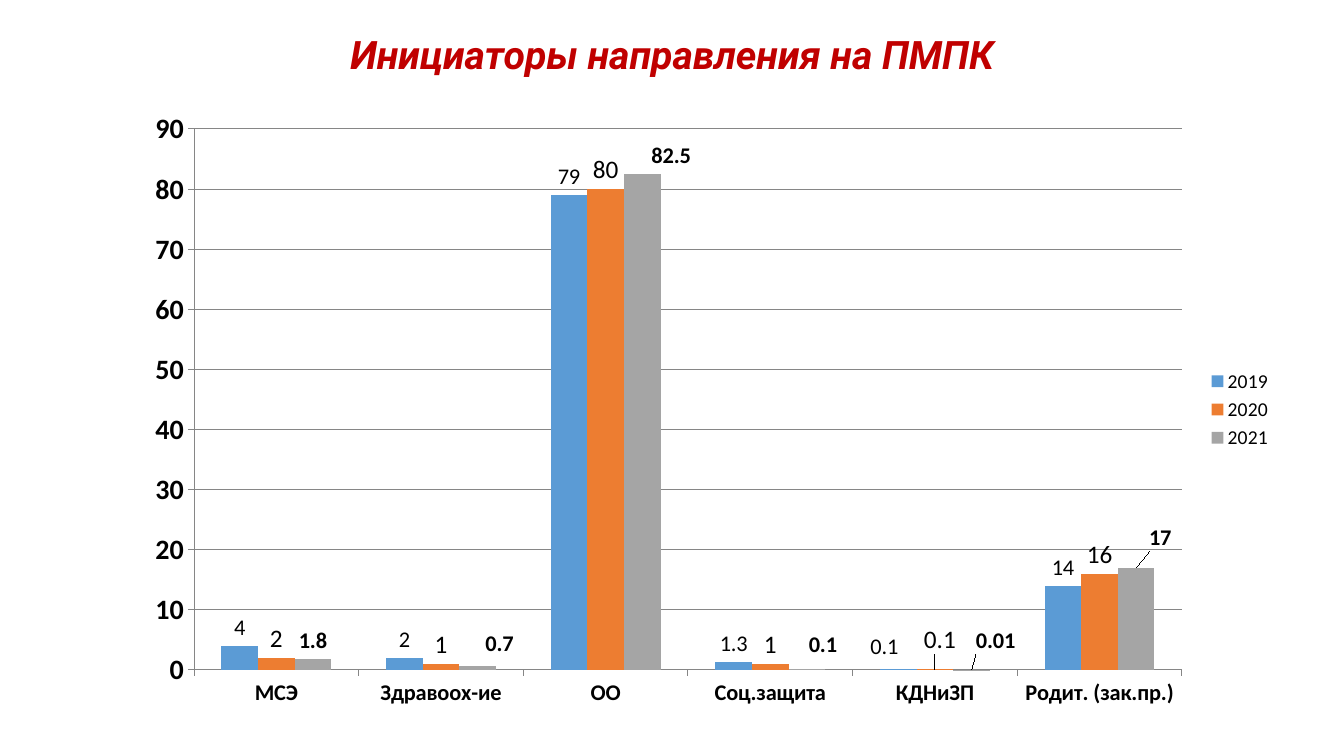
from dataclasses import dataclass, field

from lxml.etree import SubElement
from pptx import Presentation
from pptx.chart.data import CategoryChartData
from pptx.dml.color import RGBColor
from pptx.enum.chart import (XL_CHART_TYPE, XL_LABEL_POSITION, XL_LEGEND_POSITION,
                             XL_TICK_MARK)
from pptx.enum.text import MSO_ANCHOR, PP_ALIGN
from pptx.oxml.ns import qn
from pptx.util import Emu, Pt

SLIDE_WIDTH, SLIDE_HEIGHT = 1344, 756
EMU_PER_PX = 12192000 / SLIDE_WIDTH

RED = RGBColor(0xC0, 0x00, 0x00)
BLACK = RGBColor(0x00, 0x00, 0x00)
BLUE = RGBColor(0x5B, 0x9B, 0xD5)
ORANGE = RGBColor(0xED, 0x7D, 0x31)
GRAY = RGBColor(0xA5, 0xA5, 0xA5)
LINE_GRAY = RGBColor(0x86, 0x86, 0x86)


@dataclass(frozen=True)
class Box:
    left: int
    top: int
    width: int
    height: int

    def emu(self) -> tuple[Emu, ...]:
        return tuple(px(n) for n in (self.left, self.top, self.width, self.height))


@dataclass(frozen=True)
class YearSeries:
    """One year's columns; label_shifts maps a category index to px moved (x, y)."""
    year: str
    values: tuple[float, ...]
    color: RGBColor
    label_size: int
    label_bold: bool = False
    label_shifts: dict[int, tuple[int, int]] = field(default_factory=dict)


TITLE = Box(67, 30, 1210, 54)
CHART = Box(132, 100, 1151, 619)
PLOT = Box(62, 29, 988, 541)  # inside the chart

CATEGORIES = ("МСЭ", "Здравоох-ие", "ОО", "Соц.защита", "КДНиЗП", "Родит. (зак.пр.)")
YEARS = (
    YearSeries("2019", (4, 2, 79, 1.3, 0.1, 14), BLUE, 16, label_shifts={4: (-14, -5)}),
    YearSeries("2020", (2, 1, 80, 1, 0.1, 16), ORANGE, 18, label_shifts={4: (5, -11)}),
    YearSeries("2021", (1.8, 0.7, 82.5, 0.1, 0.01, 17), GRAY, 16, True,
               {1: (22, -4), 2: (29, 0), 3: (16, -7), 4: (24, -11), 5: (24, -12)}),
)


def px(length: int) -> Emu:
    return Emu(round(length * EMU_PER_PX))


def add_layout(parent, index: int, settings: dict[str, object]) -> None:
    """Give a chart element a manual layout as its child at index."""
    for old in parent.findall(qn("c:layout")):
        parent.remove(old)
    layout = SubElement(parent, qn("c:layout"))
    manual = SubElement(layout, qn("c:manualLayout"))
    for name, value in settings.items():
        SubElement(manual, qn(f"c:{name}")).set("val", str(value))
    parent.insert(index, layout)


def style_font(font, size: int, bold: bool = False) -> None:
    font.name = "Calibri"
    font.size = Pt(size)
    font.bold = bold
    font.color.rgb = BLACK


def style_axis(axis, size: int) -> None:
    style_font(axis.tick_labels.font, size, bold=True)
    axis.major_tick_mark = XL_TICK_MARK.OUTSIDE
    axis.minor_tick_mark = XL_TICK_MARK.NONE
    axis.format.line.color.rgb = LINE_GRAY
    axis.format.line.width = Pt(0.75)


def style_series(series, year: YearSeries) -> None:
    series.format.fill.solid()
    series.format.fill.fore_color.rgb = year.color
    series.invert_if_negative = False
    labels = series.data_labels
    labels.show_value = True
    labels.position = XL_LABEL_POSITION.OUTSIDE_END
    style_font(labels.font, year.label_size, year.label_bold)
    for index, (right, down) in year.label_shifts.items():
        label = series.points[index].data_label
        label.position = XL_LABEL_POSITION.OUTSIDE_END
        style_font(label.font, year.label_size, year.label_bold)
        element = labels._element.xpath(f"c:dLbl[c:idx/@val='{index}']")[0]
        add_layout(element, 1, {"x": round(right / CHART.width, 4),
                                "y": round(down / CHART.height, 4)})


def add_title(slide) -> None:
    title = slide.shapes.title
    title.left, title.top, title.width, title.height = TITLE.emu()
    frame = title.text_frame
    frame.text = "Инициаторы направления на ПМПК"
    frame.vertical_anchor = MSO_ANCHOR.MIDDLE
    para = frame.paragraphs[0]
    para.alignment = PP_ALIGN.CENTER
    para.line_spacing = 0.9
    font = para.runs[0].font
    font.name = "Roboto"
    font.size = Pt(28)
    font.bold = font.italic = True
    font.color.rgb = RED


def add_initiators_chart(slide) -> None:
    data = CategoryChartData()
    data.categories = CATEGORIES
    for year in YEARS:
        data.add_series(year.year, year.values)
    chart = slide.shapes.add_chart(XL_CHART_TYPE.COLUMN_CLUSTERED, *CHART.emu(), data).chart
    style_font(chart.font, 10)
    chart.has_title = False

    chart.has_legend = True
    chart.legend.position = XL_LEGEND_POSITION.RIGHT
    chart.legend.include_in_layout = False
    style_font(chart.legend.font, 14)

    style_axis(chart.category_axis, 16)
    values = chart.value_axis
    style_axis(values, 20)
    values.minimum_scale, values.maximum_scale, values.major_unit = 0, 90, 10
    values.has_major_gridlines = True
    values.major_gridlines.format.line.color.rgb = LINE_GRAY
    values.major_gridlines.format.line.width = Pt(0.75)

    plot = chart.plots[0]
    plot.gap_width = 150
    plot.overlap = 0
    plot.vary_by_categories = False
    for series, year in zip(plot.series, YEARS):
        style_series(series, year)

    add_layout(chart._chartSpace.chart.plotArea, 0, {
        "layoutTarget": "inner", "xMode": "edge", "yMode": "edge",
        "x": round(PLOT.left / CHART.width, 4), "y": round(PLOT.top / CHART.height, 4),
        "w": round(PLOT.width / CHART.width, 4), "h": round(PLOT.height / CHART.height, 4)})


def main() -> None:
    deck = Presentation()
    deck.slide_width, deck.slide_height = px(SLIDE_WIDTH), px(SLIDE_HEIGHT)
    slide = deck.slides.add_slide(deck.slide_layouts.get_by_name("Title Only"))
    add_title(slide)
    add_initiators_chart(slide)
    deck.save("out.pptx")


if __name__ == "__main__":
    main()
